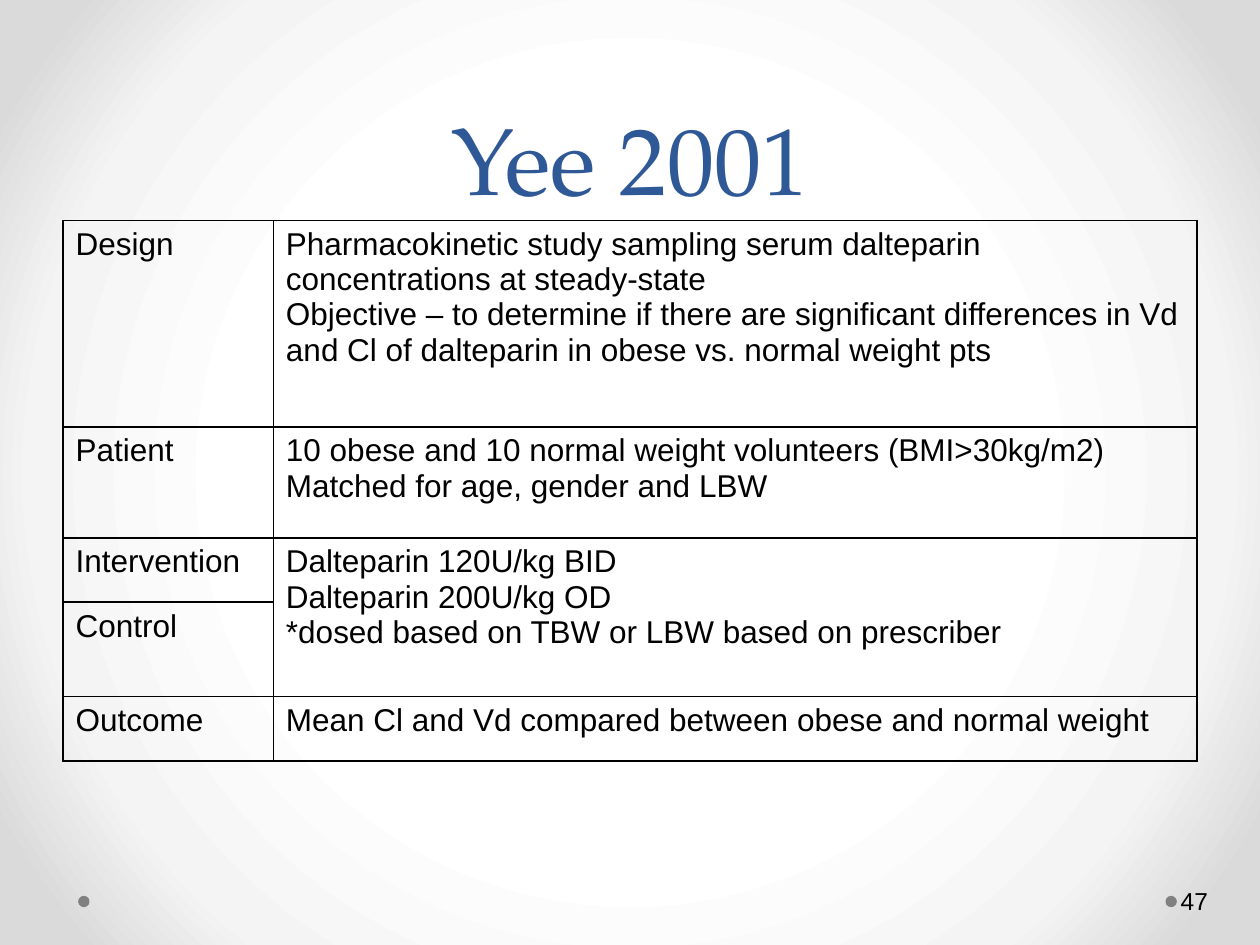
from pptx import Presentation
from pptx.dml.color import RGBColor
from pptx.enum.shapes import MSO_SHAPE
from pptx.enum.text import MSO_ANCHOR, PP_ALIGN
from pptx.oxml import parse_xml
from pptx.oxml.ns import nsdecls
from pptx.util import Inches, Pt

COLORS = {"title": "2F5897", "text": "000000", "border": "000000", "dot": "808080"}
BACKGROUND = [(50, "FFFFFF"), (76, "F4F4F4"), (92, "DADADA")]
BODY_FONT, TITLE_FONT = "Arial", "TeX Gyre Pagella"

TITLE = "Yee 2001"
PAGE_NUMBER = "47"
# Label, paragraphs, row height; None continues the cell above
ROWS = [
    ("Design", [
        "Pharmacokinetic study sampling serum dalteparin concentrations at steady-state",
        "Objective – to determine if there are significant differences in Vd and Cl "
        "of dalteparin in obese vs. normal weight pts"], 1.64),
    ("Patient", [
        "10 obese and 10 normal weight volunteers (BMI>30kg/m2)",
        "Matched for age, gender and LBW"], 0.88),
    ("Intervention", [
        "Dalteparin 120U/kg BID",
        "Dalteparin 200U/kg OD",
        "*dosed based on TBW or LBW based on prescriber"], 0.51),
    ("Control", None, 0.75),
    ("Outcome", ["Mean Cl and Vd compared between obese and normal weight"], 0.51),
]

WIDTH, HEIGHT = 10, 7.5
MARGIN = 0.5
CONTENT_W = WIDTH - 2 * MARGIN
TABLE_TOP = 1.75
LABEL_W = 1.67
DOT_SIZE, DOT_TOP, DOT_LEFTS = 0.09, 7.11, (0.62, 9.25)


def inches(*values):
    return [Inches(v) for v in values]


def write(tf, lines, size, font=BODY_FONT, color="text"):
    for i, line in enumerate(lines):
        p = tf.add_paragraph() if i else tf.paragraphs[0]
        r = p.add_run()
        r.text = line
        r.font.size, r.font.name = Pt(size), font
        r.font.color.rgb = RGBColor.from_string(COLORS[color])


def add_text(s, box, text, size, anchor, **style):
    tf = s.shapes.add_textbox(*inches(*box)).text_frame
    tf.word_wrap = True
    tf.vertical_anchor = anchor
    write(tf, [text], size, **style)
    return tf


def set_background(s):
    stops = "".join(f'<a:gs pos="{pos * 1000}"><a:srgbClr val="{color}"/></a:gs>'
                    for pos, color in BACKGROUND)
    s.element.cSld.insert(0, parse_xml(
        f'<p:bg {nsdecls("p", "a")}><p:bgPr><a:gradFill rotWithShape="1">'
        f'<a:gsLst>{stops}</a:gsLst><a:path path="circle">'
        '<a:fillToRect l="50000" t="50000" r="50000" b="50000"/></a:path>'
        '</a:gradFill><a:effectLst/></p:bgPr></p:bg>'))


def set_borders(cell):
    tc_pr = cell._tc.get_or_add_tcPr()
    for i, side in enumerate("LRTB"):
        tc_pr.insert(i, parse_xml(
            f'<a:ln{side} {nsdecls("a")} w="{Pt(1)}"><a:solidFill>'
            f'<a:srgbClr val="{COLORS["border"]}"/></a:solidFill></a:ln{side}>'))


def add_dots(s):
    for left in DOT_LEFTS:
        sp = s.shapes.add_shape(MSO_SHAPE.OVAL, *inches(left, DOT_TOP, DOT_SIZE, DOT_SIZE))
        sp.shadow.inherit = False
        sp.fill.solid()
        sp.fill.fore_color.rgb = RGBColor.from_string(COLORS["dot"])
        sp.line.fill.background()


def add_study_table(s):
    total = sum(height for *_, height in ROWS)
    table = s.shapes.add_table(
        len(ROWS), 2, *inches(MARGIN, TABLE_TOP, CONTENT_W, total)).table
    table.first_row = table.horz_banding = False
    for column, width in zip(table.columns, inches(LABEL_W, CONTENT_W - LABEL_W)):
        column.width = width
    for i, (label, lines, height) in enumerate(ROWS):
        table.rows[i].height = Inches(height)
        for cell, content in zip(table.rows[i].cells, ([label], lines)):
            cell.fill.background()
            set_borders(cell)
            write(cell.text_frame, content or [], 18)
        if lines is None:
            table.cell(i - 1, 1).merge(table.cell(i, 1))


def main():
    prs = Presentation()
    prs.slide_width, prs.slide_height = inches(WIDTH, HEIGHT)
    s = prs.slides.add_slide(prs.slide_layouts[6])
    set_background(s)
    add_dots(s)

    tf = add_text(s, (MARGIN, 0, CONTENT_W, TABLE_TOP), TITLE, 54,
                  MSO_ANCHOR.BOTTOM, font=TITLE_FONT, color="title")
    tf.paragraphs[0].alignment = PP_ALIGN.CENTER
    tf.paragraphs[0].line_spacing = Pt(58)

    add_study_table(s)

    tf = add_text(s, (9.34, 6.95, 0.61, 0.4), PAGE_NUMBER, 14, MSO_ANCHOR.MIDDLE)
    tf.margin_left, tf.margin_right = inches(0.03, 0.05)
    prs.save("out.pptx")


if __name__ == "__main__":
    main()
